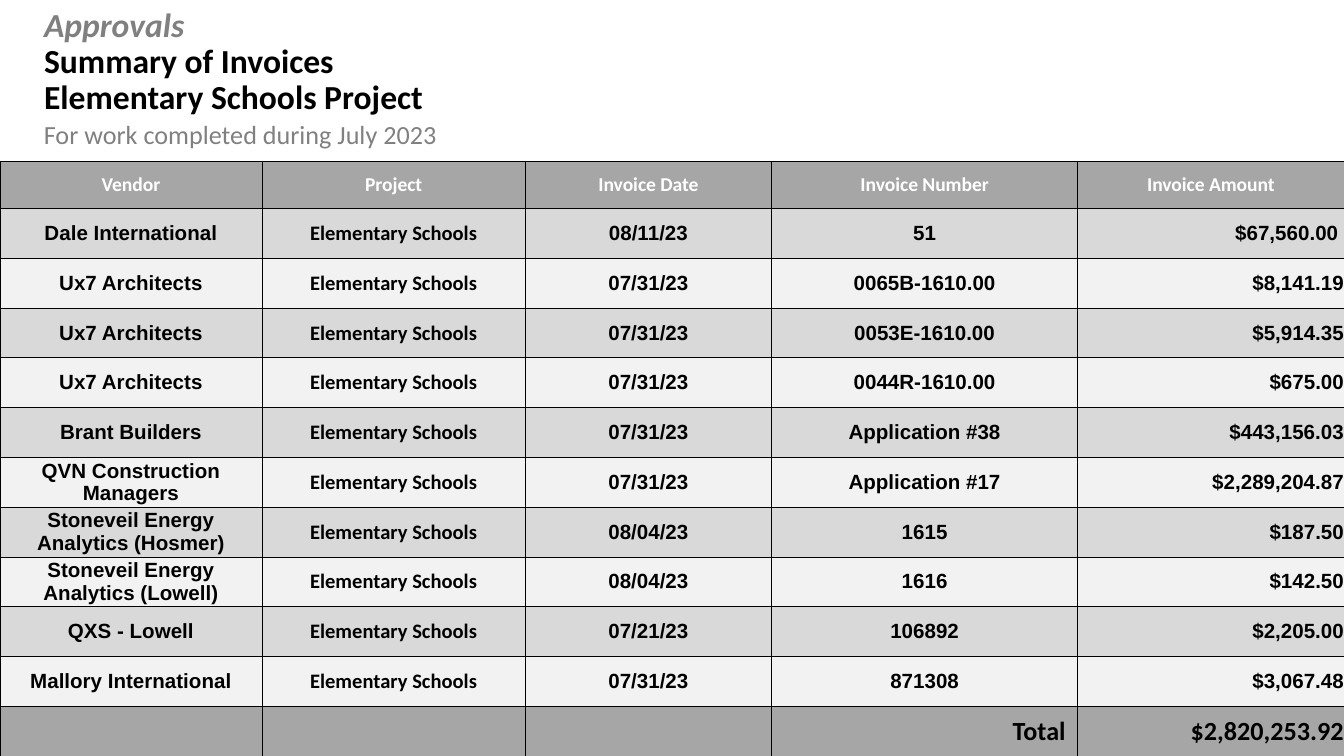
"""Build the invoice summary slide for the elementary schools project."""
from lxml.etree import SubElement as Sub
from pptx import Presentation as Deck
from pptx.dml.color import RGBColor as RGB
from pptx.enum.text import MSO_ANCHOR as Anchor, MSO_AUTO_SIZE as Fit, PP_ALIGN as Align
from pptx.oxml.ns import qn
from pptx.util import Cm, Pt

BLACK = RGB(0x00, 0x00, 0x00)
WHITE = RGB(0xFF, 0xFF, 0xFF)
GRAY = RGB(0x80, 0x80, 0x80)
DARK = RGB(0xA6, 0xA6, 0xA6)
MID = RGB(0xD9, 0xD9, 0xD9)
PALE = RGB(0xF2, 0xF2, 0xF2)


def write(para, text, size=11, font="Calibri", color=BLACK, bold=True, slant=False, align=Align.CENTER):
    para.alignment = align
    run = para.add_run()
    run.text = text
    face = run.font
    face.size, face.name = Pt(size), font
    face.bold, face.italic = bold, slant
    face.color.rgb = color


def frame(cell):
    props = cell._tc.get_or_add_tcPr()
    for side in ("lnL", "lnR", "lnT", "lnB"):
        line = Sub(props, qn(f"a:{side}"), w=str(Pt(0.5)))
        Sub(Sub(line, qn("a:solidFill")), qn("a:srgbClr"), val=str(BLACK))


deck = Deck()
deck.slide_width, deck.slide_height = Cm(25.4), Cm(14.28)
slide = deck.slides.add_slide(deck.slide_layouts[5])

title = slide.shapes.title
title.left, title.top, title.width, title.height = Cm(0.58), Cm(0.33), Cm(11), Cm(2.01)
title.text_frame.auto_size = Fit.NONE
title.text_frame.vertical_anchor = Anchor.BOTTOM
head = title.text_frame.paragraphs[0]
head.line_spacing = 0.9
write(head, "Approvals", size=18, color=GRAY, slant=True, align=Align.LEFT)
for text in ("Summary of Invoices", "Elementary Schools Project"):
    head.add_line_break()
    write(head, text, size=18, align=Align.LEFT)

note = slide.shapes.add_textbox(Cm(0.58), Cm(2.11), Cm(10.11), Cm(0.86)).text_frame
note.word_wrap = True
write(note.paragraphs[0], "For work completed during July 2023", size=14, color=GRAY,
      bold=False, align=Align.LEFT)

heads = ("Vendor", "Project", "Invoice Date", "Invoice Number", "Invoice Amount")
bills = [
    ("Dale International", "08/11/23", "51", "$67,560.00 "),
    ("Ux7 Architects", "07/31/23", "0065B-1610.00", "$8,141.19"),
    ("Ux7 Architects", "07/31/23", "0053E-1610.00", "$5,914.35"),
    ("Ux7 Architects", "07/31/23", "0044R-1610.00", "$675.00"),
    ("Brant Builders", "07/31/23", "Application #38", "$443,156.03"),
    ("QVN Construction Managers", "07/31/23", "Application #17", "$2,289,204.87"),
    ("Stoneveil Energy Analytics (Hosmer)", "08/04/23", "1615", "$187.50"),
    ("Stoneveil Energy Analytics (Lowell)", "08/04/23", "1616", "$142.50"),
    ("QXS - Lowell", "07/21/23", "106892", "$2,205.00"),
    ("Mallory International", "07/31/23", "871308", "$3,067.48"),
]
rows = [heads]
rows += [(firm, "Elementary Schools", *rest) for firm, *rest in bills]
rows.append(("", "", "", "Total", "$2,820,253.92"))
last = len(rows) - 1

grid = slide.shapes.add_table(len(rows), len(heads), 0, Cm(3.05), Cm(25.4), Cm(11.23)).table
for col, width in zip(grid.columns, (4.95, 4.98, 4.65, 5.79, 5.03)):
    col.width = Cm(width)

for r, row in enumerate(rows):
    grid.rows[r].height = Cm(0.94 if r else 0.89)
    for c, text in enumerate(row):
        cell = grid.cell(r, c)
        cell.margin_left = cell.margin_right = cell.margin_top = cell.margin_bottom = 0
        cell.vertical_anchor = Anchor.MIDDLE
        frame(cell)
        cell.fill.solid()
        cell.fill.fore_color.rgb = DARK if r in (0, last) else MID if r % 2 else PALE
        para = cell.text_frame.paragraphs[0]
        if r == 0:
            write(para, text, size=10.5, color=WHITE)
        elif r < last:
            write(para, text, font="Calibri" if c == 1 else "Arial",
                  align=Align.RIGHT if c == 4 else Align.CENTER)
        elif text:
            write(para, text, size=14, align=Align.RIGHT)
grid.cell(last, 3).margin_right = Cm(0.23)

deck.save("out.pptx")
